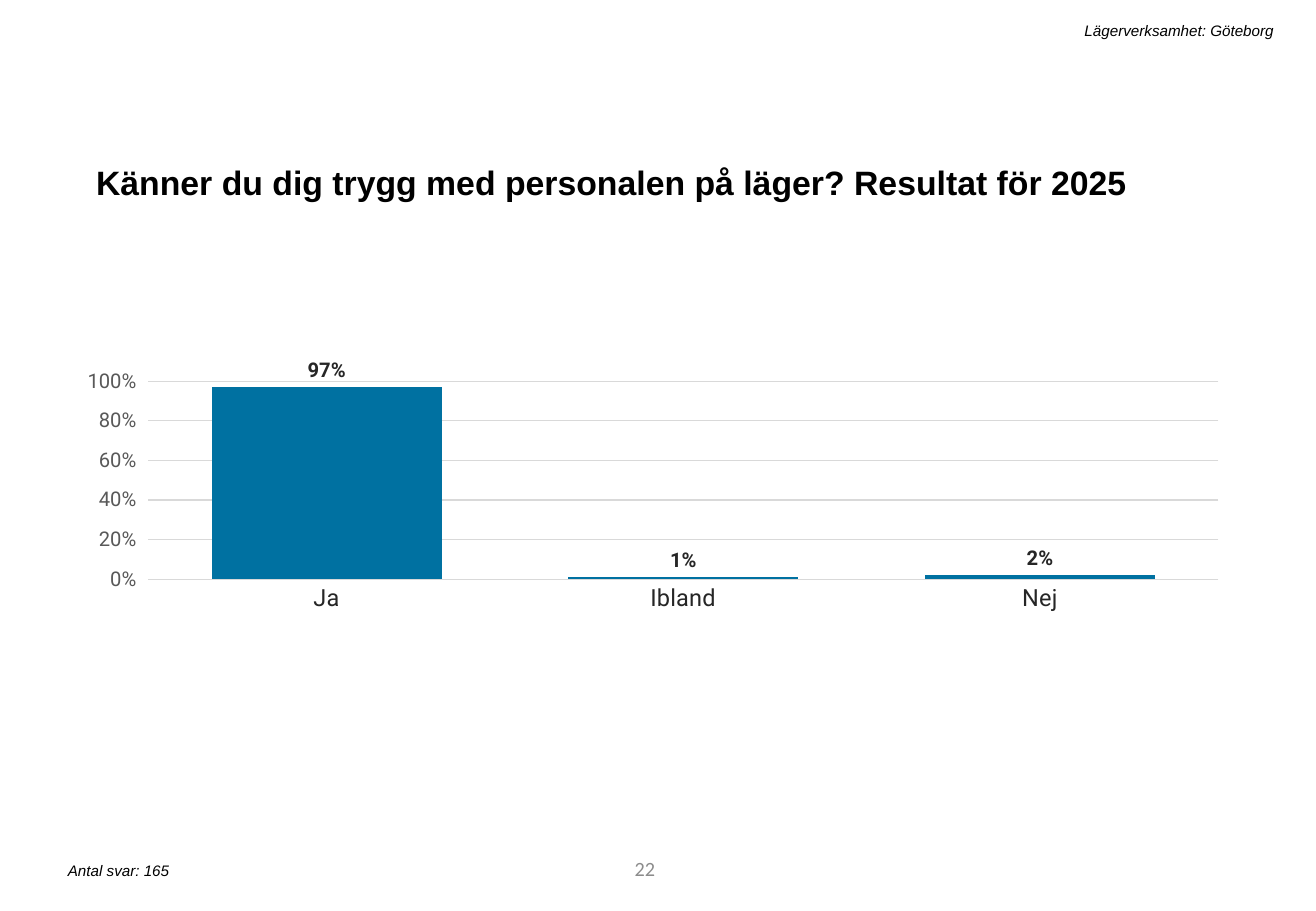
from lxml import etree
from pptx import Presentation
from pptx.chart.data import CategoryChartData
from pptx.dml.color import RGBColor
from pptx.enum.chart import XL_CHART_TYPE as ChartType, XL_LABEL_POSITION as LabelPosition, XL_TICK_MARK as TickMark
from pptx.enum.text import MSO_ANCHOR as Anchor, MSO_AUTO_SIZE as AutoSize, PP_ALIGN as Align
from pptx.oxml.ns import qn
from pptx.util import Inches, Pt

BLACK = RGBColor(0x00, 0x00, 0x00)
DARK = RGBColor(0x26, 0x26, 0x26)
MEDIUM = RGBColor(0x59, 0x59, 0x59)
MUTED = RGBColor(0x8C, 0x8C, 0x8C)
GRID = RGBColor(0xD9, 0xD9, 0xD9)
BLUE = RGBColor(0x00, 0x71, 0xA1)


def style_font(font, name, size, color, bold=False, italic=False):
    font.name = name
    font.size = Pt(size)
    font.color.rgb = color
    font.bold = bold
    font.italic = italic


def fill_text(shape, text, size, align=Align.LEFT, anchor=Anchor.TOP,
              name="Arial", color=BLACK, bold=False, italic=False):
    frame = shape.text_frame
    frame.text = text
    frame.word_wrap = True
    frame.auto_size = AutoSize.NONE
    frame.vertical_anchor = anchor
    para = frame.paragraphs[0]
    para.alignment = align
    style_font(para.runs[0].font, name, size, color, bold, italic)


def place_title(page, box, text):
    title = page.shapes.title
    title.left, title.top, title.width, title.height = map(Inches, box)
    fill_text(title, text, 20, bold=True)


def add_text(page, box, text, size, **style):
    fill_text(page.shapes.add_textbox(*map(Inches, box)), text, size, **style)


def set_plot_area(chart, **fractions):
    plot_area = chart.plots[0]._element.getparent()
    layout = plot_area.find(qn("c:layout"))
    if layout is None:
        layout = etree.Element(qn("c:layout"))
        plot_area.insert(0, layout)
    manual = etree.SubElement(layout, qn("c:manualLayout"))
    settings = {"layoutTarget": "inner", "xMode": "edge", "yMode": "edge", **fractions}
    for tag, value in settings.items():
        etree.SubElement(manual, qn(f"c:{tag}")).set("val", str(value))


def format_axes(chart):
    answers = chart.category_axis
    answers.major_tick_mark = TickMark.NONE
    style_font(answers.tick_labels.font, "Roboto", 14, DARK)
    shares = chart.value_axis
    shares.minimum_scale = 0
    shares.maximum_scale = 1
    shares.major_unit = 0.2
    shares.major_tick_mark = TickMark.OUTSIDE
    shares.format.line.fill.background()
    shares.tick_labels.number_format = "0%"
    shares.tick_labels.number_format_is_linked = False
    style_font(shares.tick_labels.font, "Roboto", 12, MEDIUM)
    for line in (answers.format.line, shares.major_gridlines.format.line):
        line.color.rgb = GRID
        line.width = Pt(0.75)


def add_answer_chart(page, box, answers):
    data = CategoryChartData(number_format="0%")
    data.categories = answers.keys()
    data.add_series("Series 1", answers.values())
    chart = page.shapes.add_chart(ChartType.COLUMN_CLUSTERED, *map(Inches, box), data).chart
    chart.has_title = False
    chart.has_legend = False
    style_font(chart.font, "Roboto", 10, BLACK)
    format_axes(chart)
    plot = chart.plots[0]
    plot.gap_width = 55
    plot.vary_by_categories = False
    series = plot.series[0]
    series.format.fill.solid()
    series.format.fill.fore_color.rgb = BLUE
    labels = series.data_labels
    labels.show_value = True
    labels.position = LabelPosition.OUTSIDE_END
    labels.number_format = "0%"
    labels.number_format_is_linked = False
    style_font(labels.font, "Roboto", 12, DARK, bold=True)
    set_plot_area(chart, x=0.05, y=0.154, w=0.94, h=0.413)


def main():
    deck = Presentation()
    deck.slide_width = Inches(10.83)
    deck.slide_height = Inches(7.5)
    page = deck.slides.add_slide(deck.slide_layouts[5])
    add_text(page, (3.05, 6.95, 2.44, 0.4), "22", 12, align=Align.RIGHT,
             anchor=Anchor.MIDDLE, name="Calibri", color=MUTED)
    place_title(page, (0.69, 1.28, 9.4, 0.44),
                "Känner du dig trygg med personalen på läger? Resultat för 2025")
    add_text(page, (0.46, 7.04, 4.41, 0.25), "Antal svar: 165", 9, italic=True)
    add_answer_chart(page, (0.72, 2.53, 9.4, 3.95), {"Ja": 0.97, "Ibland": 0.01, "Nej": 0.02})
    add_text(page, (1.72, 0.13, 8.86, 0.25), "Lägerverksamhet: Göteborg", 9,
             align=Align.RIGHT, italic=True)
    deck.save("out.pptx")


if __name__ == "__main__":
    main()
